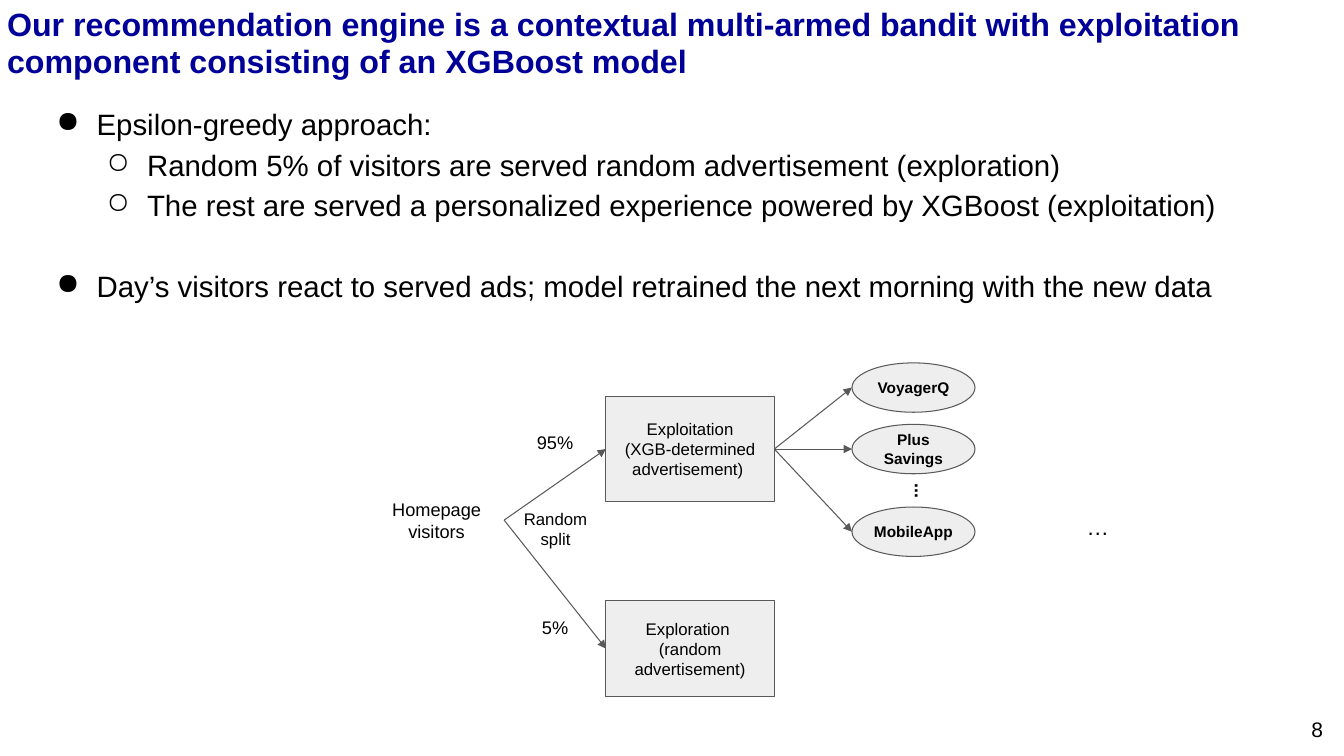
from pptx import Presentation
from pptx.dml.color import RGBColor
from pptx.enum import shapes, text
from pptx.oxml.ns import qn
from pptx.util import Inches, Pt
from lxml import etree

NAVY = RGBColor(0x00, 0x00, 0x99)
BLACK = RGBColor(0x00, 0x00, 0x00)
PALE_GREY = RGBColor(0xEE, 0xEE, 0xEE)
DARK_GREY = RGBColor(0x59, 0x59, 0x59)
LEFT, CENTER, RIGHT = text.PP_ALIGN.LEFT, text.PP_ALIGN.CENTER, text.PP_ALIGN.RIGHT
TOP, MIDDLE = text.MSO_ANCHOR.TOP, text.MSO_ANCHOR.MIDDLE
BULLETS = "●○"


def format_paragraph(para, words, size, color=BLACK, bold=False, align=LEFT, spacing=None):
    """Fill a paragraph and set its format."""
    para.text = words
    para.alignment = align
    if spacing:
        para.line_spacing = spacing
    for span in para.runs:
        span.font.name = "Arial"
        span.font.size = Pt(size)
        span.font.bold = bold
        span.font.color.rgb = color


def write(box, paragraphs, size, anchor=TOP, margins=(0.1, 0.1), **style):
    """Write paragraphs of one style into a shape."""
    frame = box.text_frame
    frame.word_wrap = True
    frame.vertical_anchor = anchor
    frame.margin_left = frame.margin_right = Inches(margins[0])
    frame.margin_top = frame.margin_bottom = Inches(margins[1])
    for index, words in enumerate(paragraphs):
        para = frame.add_paragraph() if index else frame.paragraphs[0]
        format_paragraph(para, words, size, **style)


def add_label(page, words, place, size, **style):
    """Add a text box holding one paragraph."""
    box = page.shapes.add_textbox(*map(Inches, place))
    write(box, [words], size, **style)
    return box


def add_node(page, kind, paragraphs, place, size, **style):
    """Add a grey outlined shape with centred text."""
    node = page.shapes.add_shape(kind, *map(Inches, place))
    node.shadow.inherit = False
    node.fill.solid()
    node.fill.fore_color.rgb = PALE_GREY
    node.line.color.rgb = DARK_GREY
    node.line.width = Pt(0.75)
    write(node, paragraphs, size, anchor=MIDDLE, align=CENTER, **style)
    return node


def add_arrow(page, source, target):
    """Join the right side of one shape to the left side of another."""
    arrow = page.shapes.add_connector(
        shapes.MSO_CONNECTOR.STRAIGHT,
        source.left + source.width, source.top + source.height // 2,
        target.left, target.top + target.height // 2)
    arrow.begin_connect(source, 3)
    if target.auto_shape_type == shapes.MSO_SHAPE.RECTANGLE:
        arrow.end_connect(target, 1)
    arrow.line.color.rgb = DARK_GREY
    arrow.line.width = Pt(0.75)
    etree.SubElement(arrow.line._get_or_add_ln(), qn("a:tailEnd"), type="triangle")
    etree.SubElement(arrow._element.spPr, qn("a:effectLst"))


def add_bullets(page, items, place, size):
    """Add a bulleted list from (level, space before, words) items."""
    frame = page.shapes.add_textbox(*map(Inches, place)).text_frame
    frame.word_wrap = True
    frame.margin_left = frame.margin_top = frame.margin_right = Inches(0.1)
    for index, (level, gap, words) in enumerate(items):
        para = frame.add_paragraph() if index else frame.paragraphs[0]
        para.level = level
        para.space_before = Pt(gap)
        format_paragraph(para, words, size, spacing=1.15)
        properties = para._p.get_or_add_pPr()
        properties.set("marL", str(Inches(0.5 * (level + 1))))
        properties.set("indent", str(Inches(-0.4)))
        etree.SubElement(properties, qn("a:buChar"), char=BULLETS[level])


def add_bandit_diagram(page):
    """Draw the split of visitors into exploitation and exploration."""
    visitors = add_label(page, "Homepage\nvisitors", (3.66, 4.52, 1.34, 1.28), 13,
                         anchor=MIDDLE, align=CENTER)
    rectangle = shapes.MSO_SHAPE.RECTANGLE
    exploitation = add_node(page, rectangle, ["Exploitation", "(XGB-determined advertisement) "],
                            (6.01, 3.93, 1.67, 1.05), 12)
    exploration = add_node(page, rectangle, ["Exploration \n(random advertisement)"],
                           (6.01, 5.96, 1.67, 0.95), 12)
    for branch in (exploitation, exploration):
        add_arrow(page, visitors, branch)
    for words, place, size in (
            ("95%", (5.09, 4.18, 0.83, 0.39), 13),
            ("5%", (5.12, 6.01, 0.77, 0.39), 13),
            ("Random\nsplit", (5, 4.95, 1.02, 0.53), 12)):
        add_label(page, words, place, size, align=CENTER)
    for words, top in (("VoyagerQ", 3.6), ("Plus Savings", 4.21), ("MobileApp", 5.03)):
        advert = add_node(page, shapes.MSO_SHAPE.OVAL, [words], (8.45, top, 1.22, 0.49), 11,
                          bold=True, margins=(0.02, 0.1))
        add_arrow(page, exploitation, advert)
    dots = add_label(page, "...", (8.7, 4.69, 0.6, 0.36), 13, bold=True, align=CENTER)
    dots.rotation = 270
    add_label(page, "…", (10.68, 4.99, 1.13, 0.41), 16)


def main():
    """Build the slide and save it."""
    deck = Presentation()
    deck.slide_width, deck.slide_height = Inches(13.33), Inches(7.5)
    page = deck.slides.add_slide(deck.slide_layouts[6])
    add_label(page, "Our recommendation engine is a contextual multi-armed bandit with "
              "exploitation component consisting of an XGBoost model",
              (0, 0, 13.33, 0.74), 23, color=NAVY, bold=True, spacing=0.95,
              margins=(0.07, 0.07))
    add_bullets(page, (
        (0, 0, "Epsilon-greedy approach:"),
        (1, 0, "Random 5% of visitors are served random advertisement (exploration)"),
        (1, 0, "The rest are served a personalized experience powered by XGBoost (exploitation)"),
        (0, 29, "Day’s visitors react to served ads; model retrained the next morning "
                "with the new data"),
    ), (0.36, 0.9, 12.22, 2.59), 21)
    add_bandit_diagram(page)
    add_label(page, "8", (10.87, 7.06, 2.35, 0.34), 15, anchor=MIDDLE, align=RIGHT,
              margins=(0.1, 0.05))
    deck.save("out.pptx")


if __name__ == "__main__":
    main()
